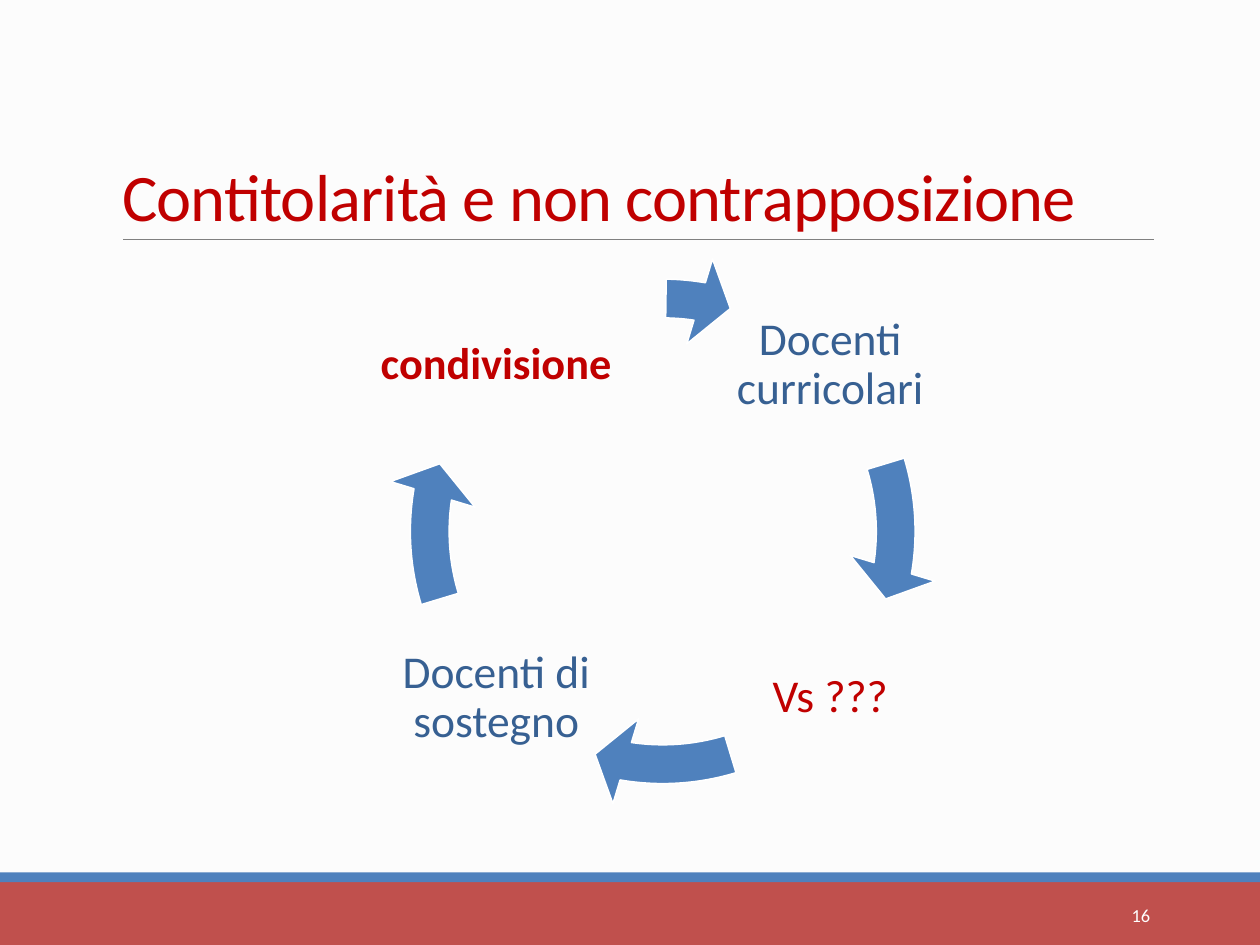
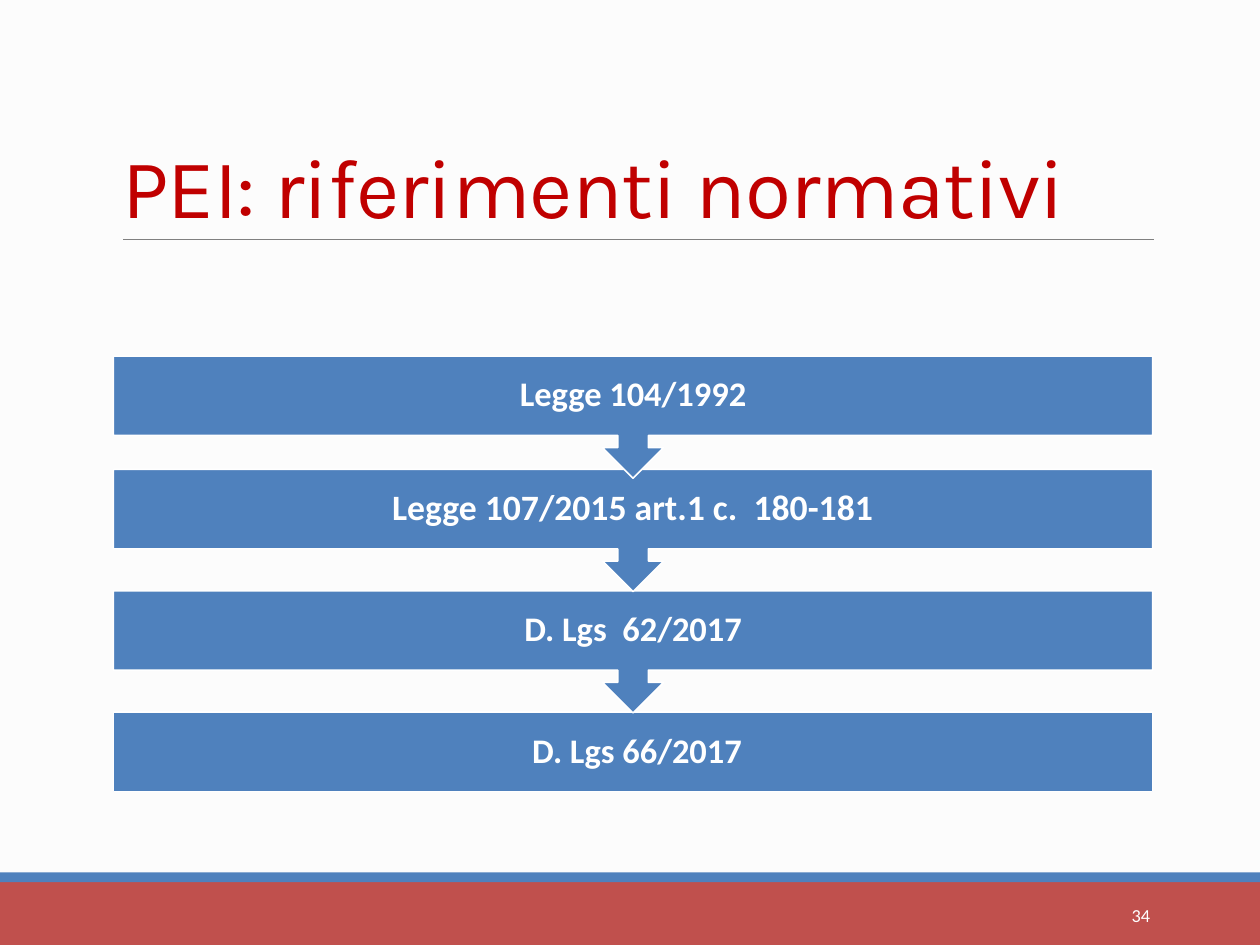
"""Two slides on co-teaching and the legal basis of the PEI."""
from lxml import etree
from pptx import Presentation
from pptx.dml.color import RGBColor
from pptx.enum.shapes import MSO_CONNECTOR, MSO_SHAPE as SHAPE
from pptx.enum.text import MSO_ANCHOR as ANCHOR, MSO_AUTO_SIZE, PP_ALIGN as ALIGN
from pptx.oxml.ns import qn
from pptx.util import Inches, Pt

PAPER = RGBColor(0xFC, 0xFC, 0xFC)
WHITE = RGBColor(0xFF, 0xFF, 0xFF)
GREY = RGBColor(0x80, 0x80, 0x80)
BLUE = RGBColor(0x4F, 0x81, 0xBD)
NAVY = RGBColor(0x37, 0x60, 0x92)
BRICK = RGBColor(0xC0, 0x50, 0x4D)
RED = RGBColor(0xC0, 0x00, 0x00)


def add_block(s, kind, x, y, w, h, fill, outlined=True):
    sp = s.shapes.add_shape(kind, Inches(x), Inches(y), Inches(w), Inches(h))
    sp.shadow.inherit = False
    sp.fill.solid()
    sp.fill.fore_color.rgb = fill
    if outlined:
        sp.line.color.rgb = WHITE
        sp.line.width = Pt(1.25)
    else:
        sp.line.fill.background()
    return sp


def set_text(sp, text, size, color, bold=False, align=ALIGN.CENTER, inset=0.05, spacing=0.9):
    tf = sp.text_frame
    tf.word_wrap = True
    tf.vertical_anchor = ANCHOR.MIDDLE
    tf.margin_left = tf.margin_right = tf.margin_top = tf.margin_bottom = Inches(inset)
    tf.text = text
    p = tf.paragraphs[0]
    p.alignment = align
    p.line_spacing = spacing
    font = p.runs[0].font
    font.name, font.size, font.bold = "Calibri", Pt(size), bold
    font.color.rgb = color


prs = Presentation()
prs.slide_width, prs.slide_height = Inches(14.22), Inches(10.67)

layout = prs.slide_layouts.get_by_name("Title Only")
layout.background.fill.solid()
layout.background.fill.fore_color.rgb = PAPER
for ph in list(layout.placeholders):
    if ph.placeholder_format.idx:
        ph._element.getparent().remove(ph._element)
    else:
        ph.left, ph.top = Inches(1.28), Inches(0.45)
        ph.width, ph.height = Inches(11.73), Inches(2.26)

titles = [
    ("Contitolarità e non contrapposizione", "Calibri", 54, "16"),
    ("PEI: riferimenti normativi", "Karla", 68.3, "34"),
]
slides = []
for title, face, size, number in titles:
    s = prs.slides.add_slide(layout)
    slides.append(s)
    tf = s.shapes.title.text_frame
    tf.text = title
    tf.auto_size = MSO_AUTO_SIZE.NONE
    tf.vertical_anchor = ANCHOR.BOTTOM
    p = tf.paragraphs[0]
    p.alignment = ALIGN.LEFT
    p.line_spacing = 0.85
    r = p.runs[0]
    r.font.name, r.font.size = face, Pt(size)
    r.font.color.rgb = RED
    r.font._element.set("spc", "-70")

    box = s.shapes.add_textbox(Inches(11.55), Inches(10.05), Inches(1.53), Inches(0.57))
    set_text(box, number, 14.9, WHITE, align=ALIGN.RIGHT, inset=0.1, spacing=1.0)

cycle, laws = slides

footer = add_block(cycle, SHAPE.RECTANGLE, 0, 9.96, 14.22, 0.71, BRICK, outlined=False)
stripe = add_block(cycle, SHAPE.RECTANGLE, 0, 9.85, 14.22, 0.11, BLUE, outlined=False)
rule = cycle.shapes.add_connector(
    MSO_CONNECTOR.STRAIGHT, Inches(1.39), Inches(2.7), Inches(13.02), Inches(2.7))
rule.line.color.rgb = GREY
rule.line.width = Pt(0.5)
etree.SubElement(rule._element.spPr, qn("a:effectLst"))
for sp in (footer, stripe, rule):
    layout.shapes._spTree.append(sp._element)

steps = [
    ("Docenti curricolari", 8.26, 3.01, 2.22, 37, NAVY, False, 343.11),
    ("Vs ???", 8.26, 6.77, 2.22, 37, RED, False, 73.11),
    ("Docenti di sostegno", 4.49, 6.77, 2.22, 37, NAVY, False, 163.11),
    ("condivisione", 3.68, 3.01, 3.84, 36, RED, True, 270.79),
]
for i, (text, x, y, w, size, color, bold, start) in enumerate(steps):
    box = cycle.shapes.add_textbox(Inches(x), Inches(y), Inches(w), Inches(2.22))
    set_text(box, text, size, color, bold)
    arrow = add_block(cycle, SHAPE.CIRCULAR_ARROW, 4.35, 2.87, 6.26, 6.26, BLUE)
    end = 9.12 + 90 * i
    for k, value in enumerate([0.07, 7.76 * 0.6, end * 0.6, start * 0.6, 0.08]):
        arrow.adjustments[k] = value

acts = [
    (" D. Lgs 66/2017", 8.04, 28),
    ("D. Lgs  62/2017", 6.67, 28),
    ("Legge 107/2015 art.1 c.  180-181", 5.3, 29),
    ("Legge 104/1992", 4.02, 28),
]
for i, (text, y, size) in enumerate(acts):
    kind, h = (SHAPE.DOWN_ARROW_CALLOUT, 1.38) if i else (SHAPE.RECTANGLE, 0.9)
    sp = add_block(laws, kind, 1.28, y, 11.73, h, BLUE)
    set_text(sp, text, size, WHITE, bold=True, inset=0.22)

prs.save("out.pptx")
